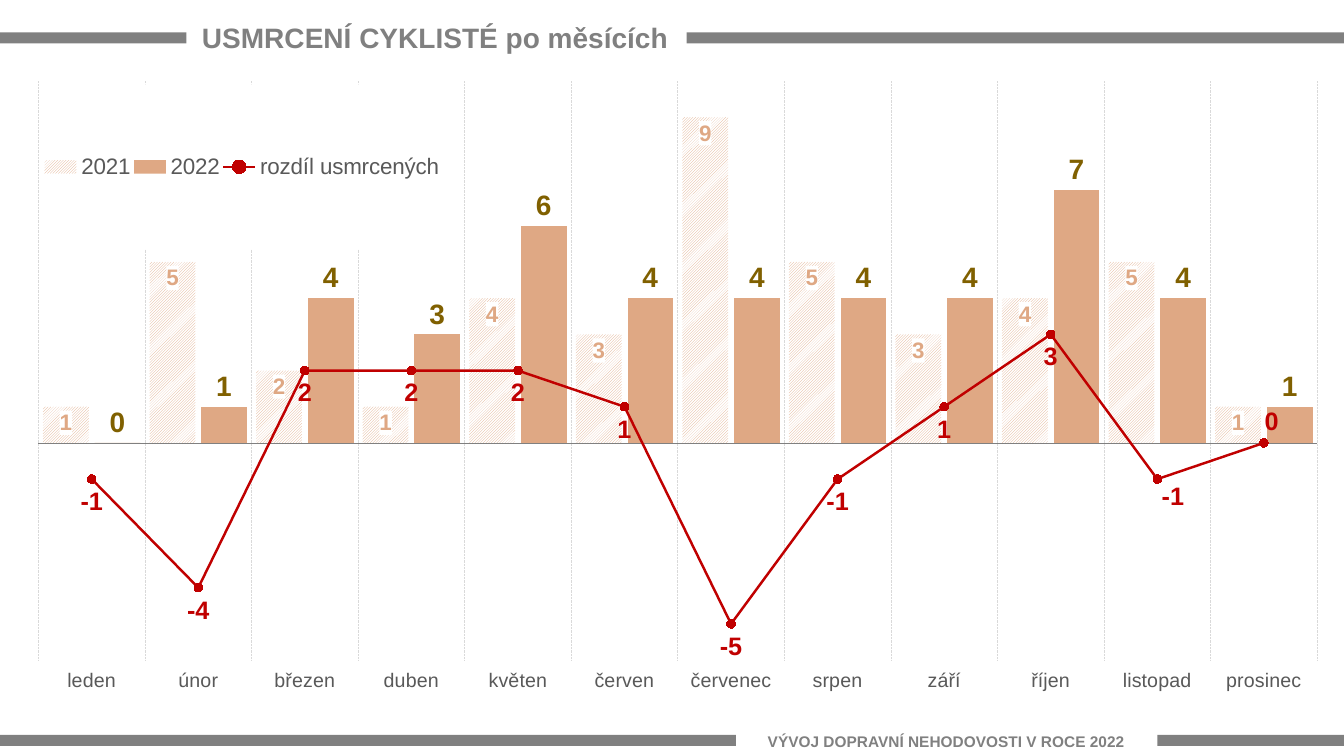
from lxml.etree import SubElement
from pptx import Presentation
from pptx.chart.data import CategoryChartData
from pptx.dml.color import RGBColor
from pptx.enum.chart import (XL_CHART_TYPE, XL_LABEL_POSITION, XL_LEGEND_POSITION,
                             XL_MARKER_STYLE, XL_TICK_LABEL_POSITION, XL_TICK_MARK)
from pptx.enum.dml import MSO_LINE, MSO_PATTERN
from pptx.enum.shapes import MSO_SHAPE
from pptx.enum.text import MSO_ANCHOR, PP_ALIGN
from pptx.oxml import parse_xml
from pptx.oxml.ns import nsdecls, qn
from pptx.util import Inches, Pt

SLIDE_WIDTH, SLIDE_HEIGHT = 13.33, 7.5
GREY, TEXT_GREY, GRID_GREY = "808080", "595959", "D9D9D9"
TAN, BROWN, RED, WHITE = "DFA884", "806000", "C00000", "FFFFFF"

MONTHS = ["leden", "únor", "březen", "duben", "květen", "červen", "červenec",
          "srpen", "září", "říjen", "listopad", "prosinec"]
KILLED_2021 = [1, 5, 2, 1, 4, 3, 9, 5, 3, 4, 5, 1]
KILLED_2022 = [0, 1, 4, 3, 6, 4, 4, 4, 4, 7, 4, 1]
DIFFERENCE = [now - before for before, now in zip(KILLED_2021, KILLED_2022)]
# Label shifts as fractions of the chart, by month index
SHIFTED_LABELS = {10: (0.012, -0.008), 11: (0.006, -0.069)}


def rgb(hex_colour):
    return RGBColor.from_string(hex_colour)


def style_font(font, size, colour, bold=False):
    font.name, font.size, font.bold = "Arial", Pt(size), bold
    font.color.rgb = rgb(colour)


def add_band(slide, bar_top, gap, text_box, text, size):
    """Grey bar across the slide, interrupted by a gap that holds the text."""
    gap_left, gap_right = gap
    for left, right in ((0, gap_left), (gap_right, SLIDE_WIDTH)):
        bar = slide.shapes.add_shape(MSO_SHAPE.RECTANGLE, Inches(left), Inches(bar_top),
                                     Inches(right - left), Inches(0.11))
        bar.shadow.inherit = False
        bar.fill.solid()
        bar.fill.fore_color.rgb = rgb(GREY)
        bar.line.fill.background()
    heading = slide.shapes.add_textbox(*(Inches(side) for side in text_box)).text_frame
    heading.word_wrap = True
    heading.vertical_anchor = MSO_ANCHOR.TOP
    heading.text = text
    paragraph = heading.paragraphs[0]
    paragraph.alignment = PP_ALIGN.CENTER
    style_font(paragraph.runs[0].font, size, GREY, bold=True)


def manual_layout(**settings):
    layout = parse_xml(f'<c:layout {nsdecls("c")}><c:manualLayout/></c:layout>')
    for tag, value in settings.items():
        SubElement(layout[0], qn(f"c:{tag}")).set("val", str(value))
    return layout


def remove_layout(element):
    for layout in element.findall(qn("c:layout")):
        element.remove(layout)


def white_fill_before_text(element):
    element.find(qn("c:txPr")).addprevious(parse_xml(
        f'<c:spPr {nsdecls("c", "a")}><a:solidFill><a:srgbClr val="{WHITE}"/>'
        '</a:solidFill></c:spPr>'))


def move_last_series_to_line(chart):
    bar_chart = chart.plots[0]._element
    series = bar_chart.findall(qn("c:ser"))[-1]
    for invert in series.findall(qn("c:invertIfNegative")):
        series.remove(invert)
    line_chart = parse_xml(
        f'<c:lineChart {nsdecls("c")}><c:grouping val="standard"/>'
        '<c:varyColors val="0"/><c:marker val="1"/></c:lineChart>')
    line_chart.insert(2, series)
    for axis in bar_chart.findall(qn("c:axId")):
        SubElement(line_chart, qn("c:axId")).set("val", axis.get("val"))
    bar_chart.addnext(line_chart)


def label_series(series, position, size, colour):
    labels = series.data_labels
    labels.show_value = True
    labels.position = position
    style_font(labels.font, size, colour, bold=True)
    return labels


def style_columns(plot):
    plot.gap_width, plot.overlap, plot.vary_by_categories = 20, -13, False
    before, now = plot.series
    before.format.fill.patterned()
    before.format.fill.pattern = MSO_PATTERN.DARK_UPWARD_DIAGONAL
    before.format.fill.fore_color.rgb = rgb(TAN)
    before.format.fill.back_color.rgb = rgb(WHITE)
    now.format.fill.solid()
    now.format.fill.fore_color.rgb = rgb(TAN)
    labels = label_series(before, XL_LABEL_POSITION.INSIDE_END, 16, TAN)
    white_fill_before_text(labels._element)
    label_series(now, XL_LABEL_POSITION.OUTSIDE_END, 20, BROWN)


def style_difference(series):
    series.smooth = False
    series.format.line.color.rgb = rgb(RED)
    series.format.line.width = Pt(1.75)
    marker = series.marker
    marker.style, marker.size = XL_MARKER_STYLE.CIRCLE, 6
    marker.format.fill.solid()
    marker.format.fill.fore_color.rgb = rgb(RED)
    marker.format.line.color.rgb = rgb(RED)
    labels = label_series(series, XL_LABEL_POSITION.BELOW, 18, RED)
    for month, (x, y) in SHIFTED_LABELS.items():
        label = series.points[month].data_label
        style_font(label.font, 18, RED, bold=True)
        label.position = XL_LABEL_POSITION.BELOW
        shifted = labels._element.findall(qn("c:dLbl"))[-1]
        shifted.find(qn("c:idx")).addnext(manual_layout(x=x, y=y))


def style_axes(chart):
    months = chart.category_axis
    months.tick_label_position = XL_TICK_LABEL_POSITION.LOW
    months.major_tick_mark = months.minor_tick_mark = XL_TICK_MARK.NONE
    months.format.line.color.rgb = rgb(GREY)
    months.format.line.width = Pt(0.5)
    months.has_major_gridlines = True
    grid = months.major_gridlines.format.line
    grid.color.rgb = rgb(GRID_GREY)
    grid.width, grid.dash_style = Pt(0.5), MSO_LINE.ROUND_DOT
    style_font(months.tick_labels.font, 14, TEXT_GREY)
    counts = chart.value_axis
    counts.minimum_scale, counts.maximum_scale = -6, 10
    counts.has_major_gridlines = False
    counts.visible = False


def style_legend(chart):
    chart.has_legend = True
    legend = chart.legend
    legend.position = XL_LEGEND_POSITION.TOP
    legend.include_in_layout = True
    style_font(legend.font, 16, TEXT_GREY)
    remove_layout(legend._element)
    legend._element.find(qn("c:legendPos")).addnext(manual_layout(
        xMode="edge", yMode="edge", x=0.013, y=0.02, w=0.31, h=0.26))
    white_fill_before_text(legend._element)


def add_monthly_chart(slide, box):
    data = CategoryChartData()
    data.categories = MONTHS
    data.add_series("2021", KILLED_2021)
    data.add_series("2022", KILLED_2022)
    data.add_series("rozdíl usmrcených", DIFFERENCE)
    chart = slide.shapes.add_chart(XL_CHART_TYPE.COLUMN_CLUSTERED,
                                   *(Inches(side) for side in box), data).chart
    chart.has_title = False
    chart.font.name, chart.font.size = "Arial Narrow", Pt(10)
    chart.font.color.rgb = rgb("000000")
    move_last_series_to_line(chart)
    columns, line = chart.plots
    style_columns(columns)
    style_difference(line.series[0])
    style_axes(chart)
    style_legend(chart)
    plot_area = columns._element.getparent()
    remove_layout(plot_area)
    plot_area.insert(0, manual_layout(layoutTarget="inner", xMode="edge", yMode="edge",
                                      x=0.011, y=0.015, w=0.987, h=0.912))


def main():
    presentation = Presentation()
    presentation.slide_width = Inches(SLIDE_WIDTH)
    presentation.slide_height = Inches(SLIDE_HEIGHT)
    slide = presentation.slides.add_slide(presentation.slide_layouts[6])
    add_band(slide, 0.32, (1.85, 6.81), (1.61, 0.15, 5.41, 0.44),
             "USMRCENÍ CYKLISTÉ po měsících", 20)
    add_band(slide, 7.29, (7.3, 11.48), (7.29, 7.21, 4.19, 0.29),
             "VÝVOJ DOPRAVNÍ NEHODOVOSTI V ROCE 2022", 11)
    add_monthly_chart(slide, (0.24, 0.71, 12.85, 6.3))
    presentation.save("out.pptx")


if __name__ == "__main__":
    main()
